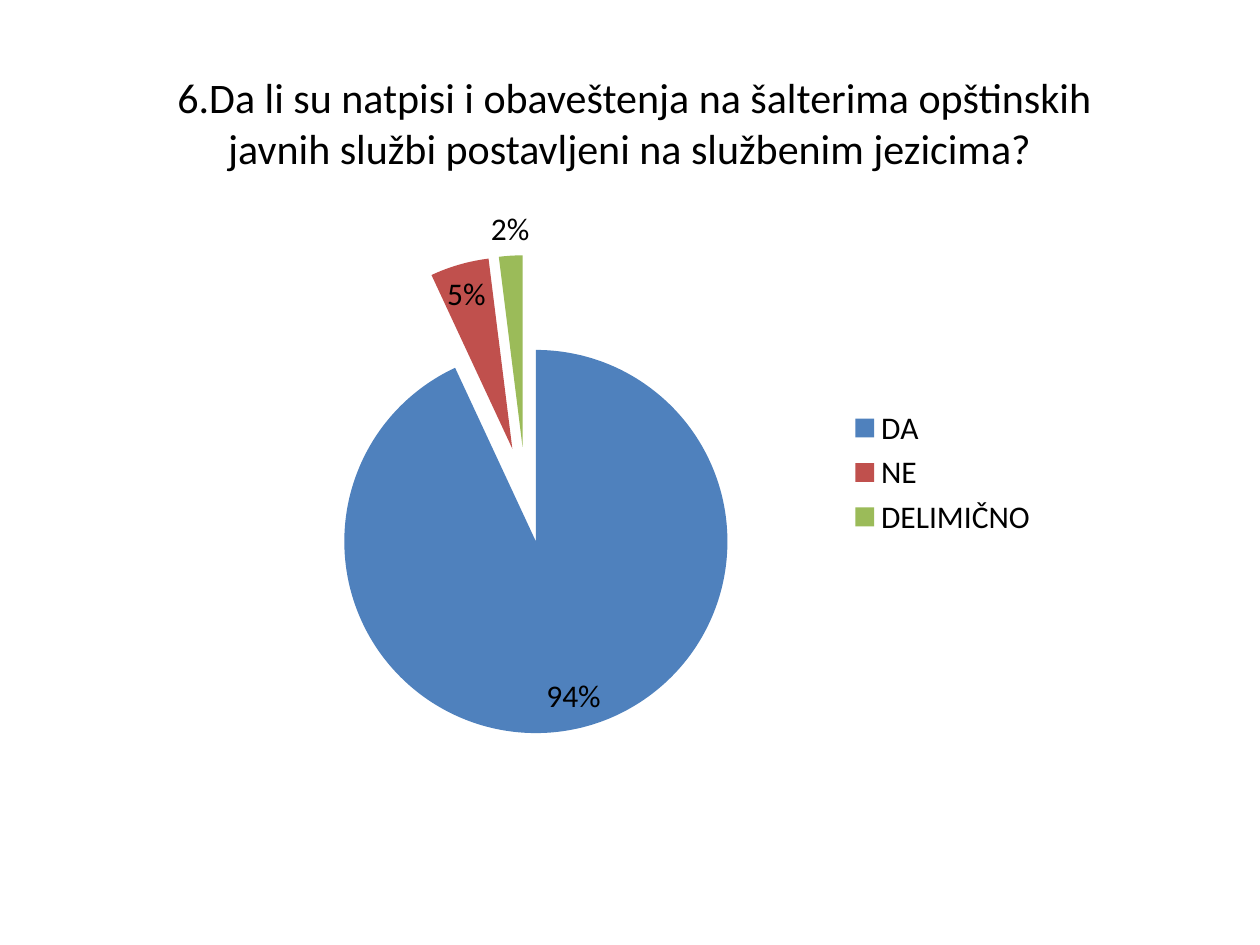
from pptx import Presentation
from pptx.chart.data import CategoryChartData
from pptx.dml.color import RGBColor
from pptx.enum.chart import XL_CHART_TYPE as ChartType, XL_LABEL_POSITION as LabelPos, XL_LEGEND_POSITION as LegendPos
from pptx.enum.text import MSO_ANCHOR as Anchor, PP_ALIGN as Align
from pptx.oxml import parse_xml
from pptx.oxml.ns import nsdecls
from pptx.util import Inches, Pt

QUESTION = "6.Da li su natpisi i obaveštenja na šalterima opštinskih javnih službi postavljeni na službenim jezicima? "
ANSWERS = [("DA", 94, "blue"), ("NE", 5, "red"), ("DELIMIČNO", 2, "green")]
COLORS = {"text": "000000", "blue": "4F81BD", "red": "C0504D", "green": "9BBB59"}
QUESTION_BOX = (1.06, 0.52, 7.95, 0.91)
PIE_BOX = (1.67, 1.53, 6.67, 4.44)
PLOT_AREA = {"x": 0.09, "y": 0.11, "w": 0.57, "h": 0.86}
EXPLOSION = 25


def color(key):
    return RGBColor.from_string(COLORS[key])


def apply(target, values):
    for key, value in values.items():
        setattr(target, key, value)


def style_font(font, size):
    apply(font, {"name": "Calibri", "size": Pt(size), "bold": False})
    font.color.rgb = color("text")


def add_question(slide):
    question = slide.shapes.title
    apply(question, dict(zip(("left", "top", "width", "height"), map(Inches, QUESTION_BOX))))
    frame = question.text_frame
    frame.text = QUESTION
    apply(frame, {"word_wrap": True, "vertical_anchor": Anchor.TOP})
    paragraph = frame.paragraphs[0]
    paragraph.alignment = Align.CENTER
    style_font(paragraph.runs[0].font, 24)


def add_answers(slide):
    answers = CategoryChartData()
    answers.categories = [name for name, _, _ in ANSWERS]
    answers.add_series("Series 1", [share for _, share, _ in ANSWERS])
    pie = slide.shapes.add_chart(ChartType.PIE, *map(Inches, PIE_BOX), answers).chart
    apply(pie, {"has_title": False, "has_legend": True})
    style_font(pie.font, 18)
    apply(pie.legend, {"position": LegendPos.RIGHT, "include_in_layout": False})

    plot = pie.plots[0]
    apply(plot, {"vary_by_categories": True, "has_data_labels": True})
    apply(plot.data_labels, {
        "show_value": True,
        "show_percentage": False,
        "number_format": '0"%"',
        "number_format_is_linked": False,
        "position": LabelPos.BEST_FIT,
    })
    style_font(plot.data_labels.font, 18)

    series = plot.series[0]
    for index, (_, _, key) in enumerate(ANSWERS):
        fill = series.points[index].format.fill
        fill.solid()
        fill.fore_color.rgb = color(key)
    first_point = series._element.xpath("c:dPt")[0]
    first_point.addprevious(parse_xml(f'<c:explosion {nsdecls("c")} val="{EXPLOSION}"/>'))

    modes = "".join(f'<c:{axis}Mode val="edge"/>' for axis in "xy")
    edges = "".join(f'<c:{edge} val="{value}"/>' for edge, value in PLOT_AREA.items())
    layout = parse_xml(
        f'<c:layout {nsdecls("c")}><c:manualLayout><c:layoutTarget val="inner"/>'
        f"{modes}{edges}</c:manualLayout></c:layout>"
    )
    plot_area = pie._chartSpace.xpath("c:chart/c:plotArea")[0]
    for automatic in plot_area.xpath("c:layout"):
        plot_area.remove(automatic)
    plot_area.insert(0, layout)


def main():
    deck = Presentation()
    apply(deck, {"slide_width": Inches(10), "slide_height": Inches(7.5)})
    slide = deck.slides.add_slide(deck.slide_layouts.get_by_name("Title Only"))
    add_question(slide)
    add_answers(slide)
    deck.save("out.pptx")


if __name__ == "__main__":
    main()
